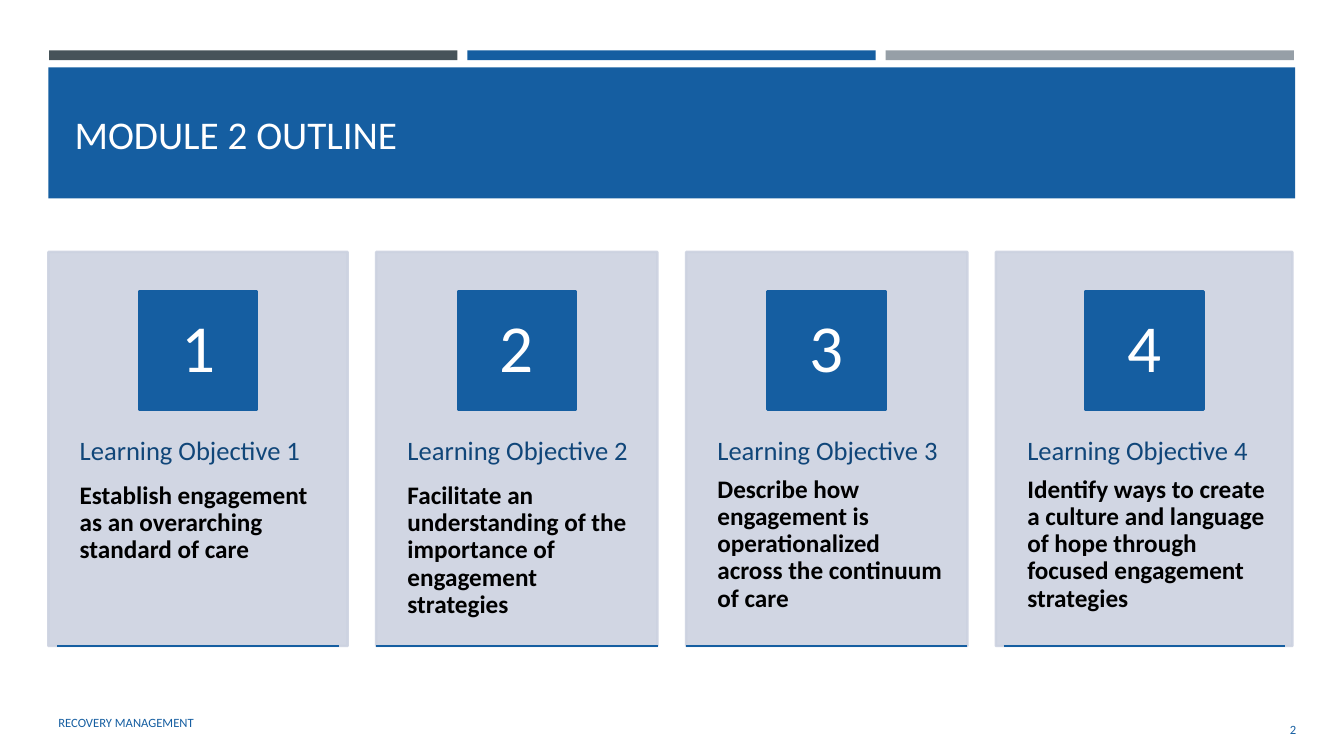
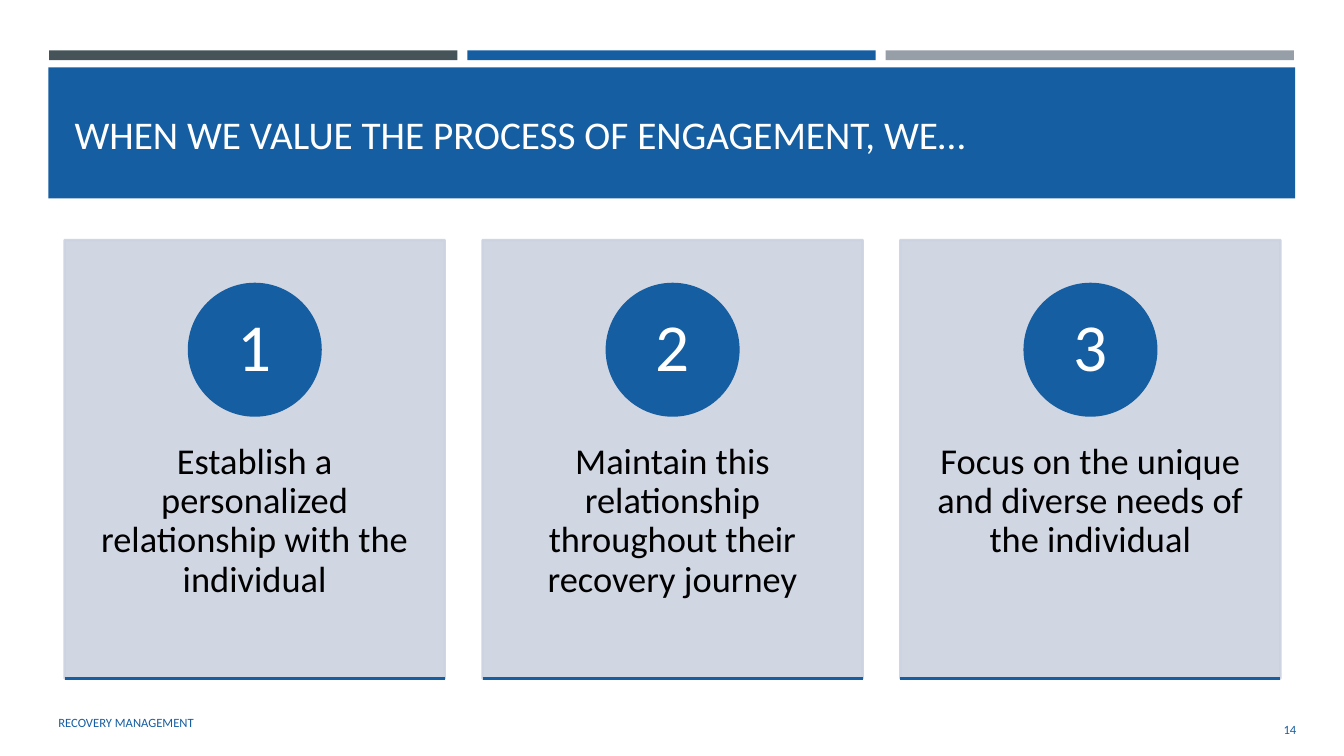
"""Build two slides of numbered cards under a shared banner."""
import dataclasses
import itertools

import lxml.etree
import pptx
import pptx.dml.color
import pptx.enum.shapes
import pptx.enum.text
import pptx.oxml.ns
import pptx.util

Cm, Pt = pptx.util.Cm, pptx.util.Pt
RGB = pptx.dml.color.RGBColor.from_string
FORM = pptx.enum.shapes.MSO_SHAPE
LINE = pptx.enum.shapes.MSO_CONNECTOR.STRAIGHT
ALIGN = pptx.enum.text.PP_ALIGN
ANCHOR = pptx.enum.text.MSO_ANCHOR
FIT = pptx.enum.text.MSO_AUTO_SIZE


@dataclasses.dataclass(frozen=True)
class Theme:
    """Hold the colours, font and type sizes."""
    blue: str = "155EA1"
    navy: str = "104679"
    slate: str = "465359"
    grey: str = "969FA7"
    pale: str = "CCD2E0"
    white: str = "FFFFFF"
    black: str = "000000"
    font: str = "Calibri"
    title: float = 28
    digit: float = 48
    head: float = 19
    body: float = 18
    large: float = 26
    small: float = 9
    line: float = 1.75


T = Theme()
FOOTER = "RECOVERY MANAGEMENT"
BANDS = [T.slate, T.blue, T.grey]

GOALS = [
    ("Learning Objective 1", "Establish engagement as an overarching standard of care", 11.5),
    ("Learning Objective 2",
     "Facilitate an understanding of the importance of engagement strategies", 11.5),
    ("Learning Objective 3",
     "Describe how engagement is operationalized across the continuum of care", 7),
    ("Learning Objective 4",
     "Identify ways to create a culture and language of hope through focused engagement strategies", 7),
]
STEPS = [
    "Establish a personalized relationship with the individual",
    "Maintain this relationship throughout their recovery journey",
    "Focus on the unique and diverse needs of the individual",
]


def style(para, size, color, bold=False, align=ALIGN.LEFT, after=0, pitch=1.0):
    """Format a whole paragraph."""
    para.alignment, para.line_spacing = align, pitch
    para.space_before, para.space_after = Pt(0), Pt(after)
    font = para.font
    font.name, font.size, font.bold = T.font, Pt(size), bold
    font.color.rgb = RGB(color)


def setup(frame, anchor, pads=(0.25, 0.13, 0.25, 0.13)):
    """Set wrapping, anchor and margins of a text frame."""
    frame.word_wrap, frame.auto_size = True, FIT.NONE
    frame.vertical_anchor = anchor
    (frame.margin_left, frame.margin_top,
     frame.margin_right, frame.margin_bottom) = map(Cm, pads)


def block(slide, form, box, color, edge=False, alpha=None):
    """Add a flat filled shape."""
    shape = slide.shapes.add_shape(form, *map(Cm, box))
    shape.shadow.inherit = False
    shape.fill.solid()
    shape.fill.fore_color.rgb = RGB(color)
    if edge:
        shape.line.color.rgb = RGB(color)
        shape.line.width = Pt(T.line)
    else:
        shape.line.fill.background()
    if alpha:
        for node in shape.element.iter(pptx.oxml.ns.qn("a:srgbClr")):
            lxml.etree.SubElement(node, pptx.oxml.ns.qn("a:alpha"), val=str(alpha * 1000))
    return shape


def label(slide, box, paras, anchor, **pads):
    """Add a text box from (text, format) pairs."""
    frame = slide.shapes.add_textbox(*map(Cm, box)).text_frame
    setup(frame, anchor, **pads)
    for rank, (text, look) in enumerate(paras):
        para = frame.add_paragraph() if rank else frame.paragraphs[0]
        para.text = text
        style(para, **look)


def rule(slide, left, top, width):
    """Add a blue horizontal line."""
    line = slide.shapes.add_connector(LINE, Cm(left), Cm(top), Cm(left + width), Cm(top))
    line.line.color.rgb = RGB(T.blue)
    line.line.width = Pt(T.line)
    lxml.etree.SubElement(line.element.spPr, pptx.oxml.ns.qn("a:effectLst"))


def dress(layout, slide):
    """Draw the bands and banner, then hand them to the layout."""
    for holder in list(layout.placeholders):
        if holder.placeholder_format.idx:
            holder.element.getparent().remove(holder.element)
    parts = [block(slide, FORM.RECTANGLE, (1.24 + 10.54 * col, 1.27, 10.29, 0.25), color)
             for col, color in enumerate(BANDS)]
    parts.append(block(slide, FORM.RECTANGLE, (1.22, 1.7, 31.42, 3.3), T.blue))
    first = layout.placeholders[0].element
    for part in parts:
        first.addprevious(part.element)


def start(slide, title, number):
    """Fill the title, footer and slide number."""
    head = slide.shapes.title
    head.left, head.top, head.width, head.height = map(Cm, (1.63, 1.96, 30.63, 2.82))
    head.text_frame.text = title
    setup(head.text_frame, ANCHOR.MIDDLE)
    style(head.text_frame.paragraphs[0], T.title, T.white)
    look = dict(size=T.small, color=T.blue)
    label(slide, (1.22, 17.7, 18.95, 1.02), [(FOOTER, look)], ANCHOR.MIDDLE)
    label(slide, (30, 17.86, 2.92, 1.02),
          [(number, dict(look, align=ALIGN.RIGHT))], ANCHOR.MIDDLE)


def cards(slide, texts, widths, left, top, high, gap, form, pad):
    """Lay out a row of numbered cards."""
    span, side = min(widths), 0.3 * high
    lefts = itertools.accumulate((wide + gap for wide in widths), initial=left)
    for rank, (paras, wide, x) in enumerate(zip(texts, widths, lefts), 1):
        block(slide, FORM.RECTANGLE, (x, top, wide, high), T.pale, edge=True, alpha=90)
        label(slide, (x, top + 0.38 * high, wide, 0.6 * high), paras, ANCHOR.TOP,
              pads=(pad[0], 0.91, pad[1], 0.91))
        badge = block(slide, form, (x + (wide - side) / 2, top + 0.1 * high, side, side),
                      T.blue, edge=True)
        setup(badge.text_frame, ANCHOR.MIDDLE, (0, 0.03, 0, 0.03))
        badge.text_frame.text = str(rank)
        style(badge.text_frame.paragraphs[0], T.digit, T.white, align=ALIGN.CENTER, pitch=0.9)
        rule(slide, x + (wide - span) / 2, top + high, span)


def main():
    """Build and save the deck."""
    deck = pptx.Presentation()
    deck.slide_width, deck.slide_height = Cm(33.87), Cm(19.05)
    layout = deck.slide_layouts[5]

    slide = deck.slides.add_slide(layout)
    dress(layout, slide)
    start(slide, "MODULE 2 OUTLINE", "2")
    goals = [[(head, dict(size=T.head, color=T.navy, after=after, pitch=0.9)),
              (body, dict(size=T.body, color=T.black, bold=True, pitch=0.9))]
             for head, body, after in GOALS]
    cards(slide, goals, [7.54, 7.09, 7.09, 7.47], 1.22, 6.35, 9.93, 0.72,
          FORM.RECTANGLE, (0.79, 0.56))

    slide = deck.slides.add_slide(layout)
    start(slide, "WHEN WE VALUE THE PROCESS OF ENGAGEMENT, WE…", "14")
    look = dict(size=T.large, color=T.black, align=ALIGN.CENTER, pitch=0.9)
    cards(slide, [[(step, look)] for step in STEPS], [9.58] * 3, 1.63, 6.05, 11.05, 0.95,
          FORM.OVAL, (0.74, 0.74))

    deck.save("out.pptx")


if __name__ == "__main__":
    main()
